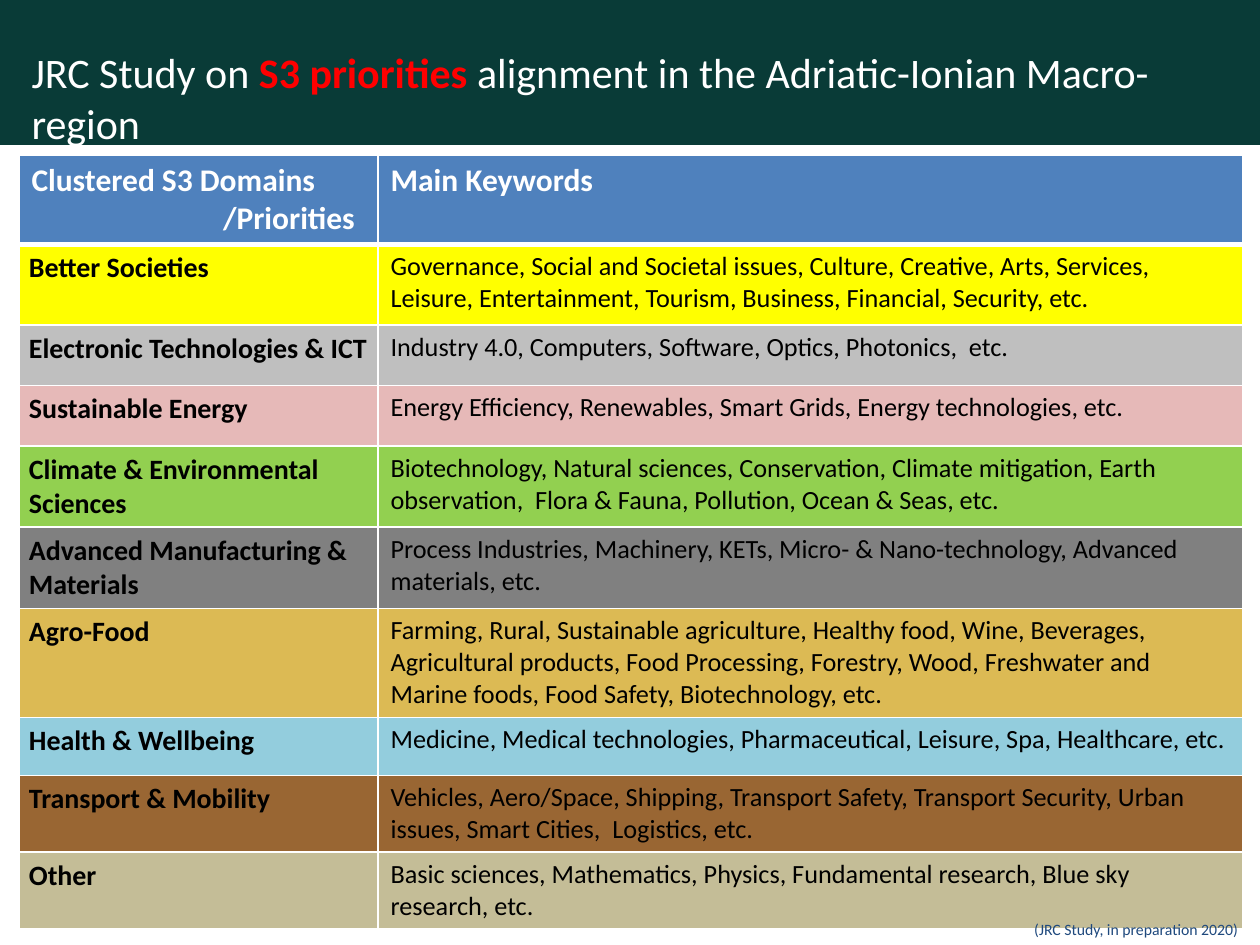
from dataclasses import dataclass

from lxml import etree
from pptx import Presentation
from pptx.dml.color import RGBColor
from pptx.enum import shapes, text
from pptx.oxml import ns
from pptx.util import Inches, Pt


@dataclass(frozen=True)
class Theme:
    font: str = "Calibri"
    band: str = "093B37"
    header: str = "4F81BD"
    light: str = "FFFFFF"
    dark: str = "000000"
    accent: str = "FF0000"
    source: str = "1F497D"
    title_size: int = 24
    header_size: int = 18
    domain_size: int = 16
    keyword_size: int = 15
    source_size: int = 9


DOMAINS = [
    ("Better Societies", "Governance, Social and Societal issues, Culture, Creative, Arts, Services, "
     "Leisure, Entertainment, Tourism, Business, Financial, Security, etc.", "FFFF00", 0.64),
    ("Electronic Technologies & ICT",
     "Industry 4.0, Computers, Software, Optics, Photonics,  etc.", "BFBFBF", 0.48),
    ("Sustainable Energy",
     "Energy Efficiency, Renewables, Smart Grids, Energy technologies, etc.", "E6B9B8", 0.48),
    ("Climate & Environmental Sciences",
     "Biotechnology, Natural sciences, Conservation, Climate mitigation, Earth "
     "observation,  Flora & Fauna, Pollution, Ocean & Seas, etc.", "92D050", 0.61),
    ("Advanced Manufacturing & Materials",
     "Process Industries, Machinery, KETs, Micro- & Nano-technology, Advanced "
     "materials, etc.", "808080", 0.61),
    ("Agro-Food", "Farming, Rural, Sustainable agriculture, Healthy food, Wine, Beverages, "
     "Agricultural products, Food Processing, Forestry, Wood, Freshwater and "
     "Marine foods, Food Safety, Biotechnology, etc.", "CC9900", 0.82),
    ("Health & Wellbeing",
     "Medicine, Medical technologies, Pharmaceutical, Leisure, Spa, Healthcare, etc.",
     "93CDDD", 0.46),
    ("Transport & Mobility",
     "Vehicles, Aero/Space, Shipping, Transport Safety, Transport Security, Urban "
     "issues, Smart Cities,  Logistics, etc.", "996633", 0.58),
    ("Other", "Basic sciences, Mathematics, Physics, Fundamental research, Blue sky "
     "research, etc.", "C4BD97", 0.6),
]
OPACITY = {"Agro-Food": 67}


def write(paragraph, words, *, font, size, color, bold=False):
    run = paragraph.add_run()
    run.text = words
    run.font.name = font
    run.font.size = Pt(size)
    run.font.bold = bold
    run.font.color.rgb = RGBColor.from_string(color)


class SlideBuilder:
    def __init__(self, slide, theme):
        self.slide = slide
        self.theme = theme

    def title(self, left, top, width, height, parts):
        heading = self.slide.shapes.title
        heading.left, heading.top = Inches(left), Inches(top)
        heading.width, heading.height = Inches(width), Inches(height)
        frame = heading.text_frame
        frame.word_wrap = True
        frame.auto_size = text.MSO_AUTO_SIZE.NONE
        frame.vertical_anchor = text.MSO_ANCHOR.TOP
        line = frame.paragraphs[0]
        line.alignment = text.PP_ALIGN.LEFT
        for words, color, bold in parts:
            write(line, words, font=self.theme.font, size=self.theme.title_size,
                  color=color, bold=bold)

    def band(self, left, top, width, height):
        band = self.slide.shapes.add_shape(
            shapes.MSO_SHAPE.RECTANGLE, Inches(left), Inches(top), Inches(width), Inches(height))
        band.shadow.inherit = False
        band.fill.solid()
        band.fill.fore_color.rgb = RGBColor.from_string(self.theme.band)
        band.line.fill.background()
        self.slide.shapes.title.element.addprevious(band.element)

    def caption(self, left, top, width, height, words):
        frame = self.slide.shapes.add_textbox(
            Inches(left), Inches(top), Inches(width), Inches(height)).text_frame
        frame.word_wrap = True
        write(frame.paragraphs[0], words, font=self.theme.font,
              size=self.theme.source_size, color=self.theme.source)

    def table(self, left, top, widths, heights):
        grid = self.slide.shapes.add_table(
            len(heights), len(widths), Inches(left), Inches(top),
            Inches(sum(widths)), Inches(sum(heights))).table
        grid.horz_banding = False
        for column, width in zip(grid.columns, widths):
            column.width = Inches(width)
        for row, height in zip(grid.rows, heights):
            row.height = Inches(height)
        return grid

    def cell(self, cell, lines, fill, *, size, color, bold=False, bottom=1, opacity=100):
        properties = cell._tc.get_or_add_tcPr()
        for side, width in (("L", 1), ("R", 1), ("T", 1), ("B", bottom)):
            edge = etree.SubElement(properties, ns.qn(f"a:ln{side}"), w=str(Pt(width)))
            paint = etree.SubElement(edge, ns.qn("a:solidFill"))
            etree.SubElement(paint, ns.qn("a:srgbClr"), val=self.theme.light)
        cell.fill.solid()
        cell.fill.fore_color.rgb = RGBColor.from_string(fill)
        if opacity < 100:
            shade = properties.find(ns.qn("a:solidFill")).find(ns.qn("a:srgbClr"))
            etree.SubElement(shade, ns.qn("a:alpha"), val=str(opacity * 1000))
        frame = cell.text_frame
        for index, (words, indent) in enumerate(lines):
            line = frame.add_paragraph() if index else frame.paragraphs[0]
            if indent:
                line._p.get_or_add_pPr().set("marL", str(Inches(indent)))
            write(line, words, font=self.theme.font, size=size, color=color, bold=bold)


def main():
    theme = Theme()
    deck = Presentation()
    deck.slide_width, deck.slide_height = Inches(10), Inches(7.5)
    builder = SlideBuilder(deck.slides.add_slide(deck.slide_layouts[5]), theme)

    builder.band(0, 0, 10, 1.15)
    priorities = builder.table(0.15, 1.23, [2.85, 6.86], [0.48] + [row[3] for row in DOMAINS])
    headings = [[("Clustered S3 Domains", 0), ("/Priorities", 1.52)], [("Main Keywords", 0)]]
    for column, lines in enumerate(headings):
        builder.cell(priorities.cell(0, column), lines, theme.header,
                     size=theme.header_size, color=theme.light, bold=True, bottom=3)
    for row, (domain, keywords, fill, _) in enumerate(DOMAINS, 1):
        opacity = OPACITY.get(domain, 100)
        domain_cell = priorities.cell(row, 0)
        domain_cell.margin_left, domain_cell.margin_right = Inches(0.08), 0
        builder.cell(domain_cell, [(domain, 0)], fill, size=theme.domain_size,
                     color=theme.dark, bold=True, opacity=opacity)
        builder.cell(priorities.cell(row, 1), [(keywords, 0)], fill,
                     size=theme.keyword_size, color=theme.dark, opacity=opacity)

    builder.title(0.15, 0.32, 9.85, 0.5, [
        ("JRC Study on ", theme.light, False),
        ("S3 priorities ", theme.accent, True),
        ("alignment in the Adriatic-Ionian Macro-region", theme.light, False),
    ])
    builder.caption(8.11, 7.25, 1.88, 0.25, "(JRC Study, in preparation 2020)")
    deck.save("out.pptx")


if __name__ == "__main__":
    main()
